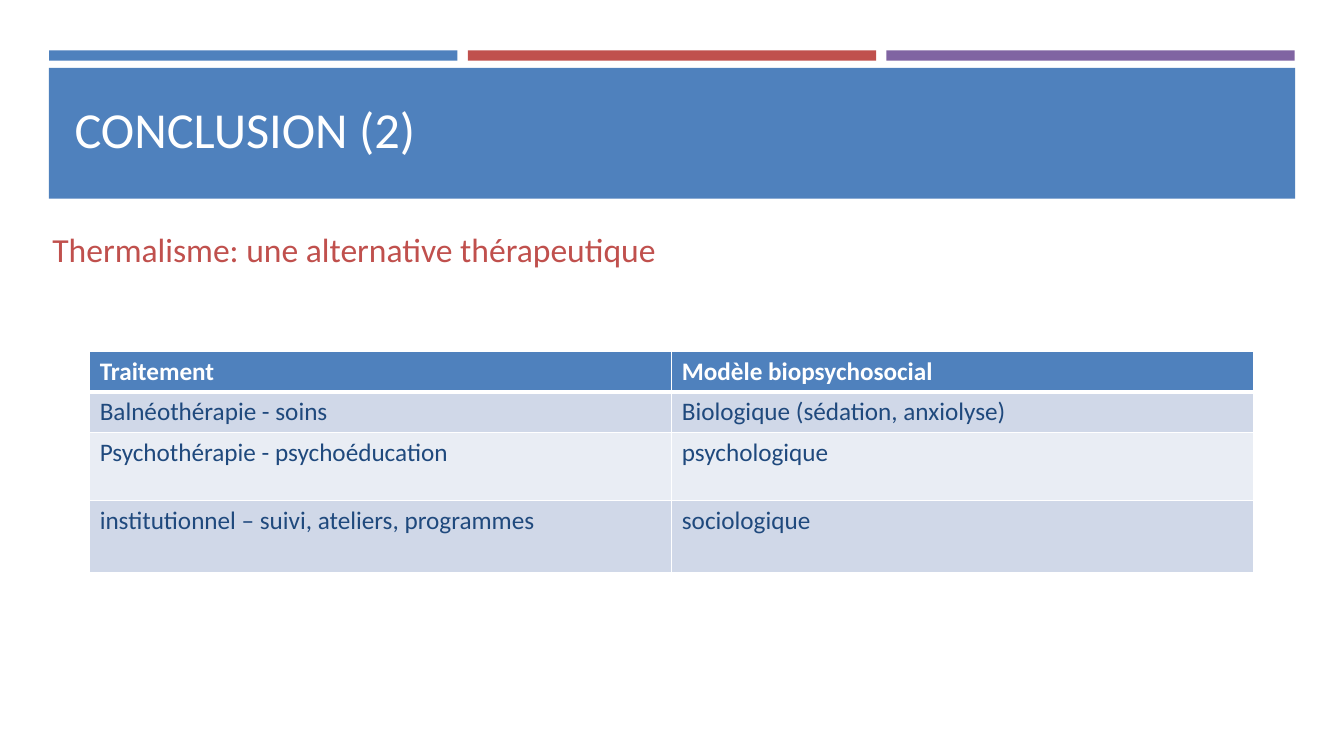
from lxml import etree
from pptx import Presentation
from pptx.dml.color import RGBColor
from pptx.enum.shapes import MSO_SHAPE
from pptx.enum.text import MSO_ANCHOR
from pptx.oxml.ns import qn
from pptx.util import Cm, Pt

RECTANGLE = MSO_SHAPE.RECTANGLE
TOP, BOTTOM = MSO_ANCHOR.TOP, MSO_ANCHOR.BOTTOM

WHITE, BLUE, RED, PURPLE = "FFFFFF", "4F81BD", "C0504D", "8064A2"
NAVY, BAND_DARK, BAND_LIGHT = "1F497D", "D0D8E8", "E9EDF4"


def color(value):
    return RGBColor.from_string(value)


class SlideBuilder:
    font_name = "Calibri"

    def __init__(self, slide):
        self.slide = slide

    def style(self, paragraph, size, text_color, bold=False):
        font = paragraph.font
        font.name, font.size, font.bold = self.font_name, Pt(size), bold
        font.color.rgb = color(text_color)

    def bar(self, left, top, width, height, fill):
        shape = self.slide.shapes.add_shape(
            RECTANGLE, Cm(left), Cm(top), Cm(width), Cm(height))
        shape.shadow.inherit = False
        shape.fill.solid()
        shape.fill.fore_color.rgb = color(fill)
        shape.line.fill.background()

    def text(self, left, top, width, height, text, size, text_color, anchor=TOP):
        box = self.slide.shapes.add_textbox(
            Cm(left), Cm(top), Cm(width), Cm(height))
        frame = box.text_frame
        frame.word_wrap = True
        frame.vertical_anchor = anchor
        frame.text = text
        self.style(frame.paragraphs[0], size, text_color)

    def borders(self, cell, widths):
        """Draw white borders; widths are points for left, right, top, bottom."""
        properties = cell._tc.get_or_add_tcPr()
        for index, (side, width) in enumerate(zip("LRTB", widths)):
            line = etree.Element(qn(f"a:ln{side}"), w=str(Pt(width)))
            fill = etree.SubElement(line, qn("a:solidFill"))
            etree.SubElement(fill, qn("a:srgbClr"), val=WHITE)
            properties.insert(index, line)

    def table(self, left, top, width, row_heights, rows, size):
        columns = len(rows[0])
        table = self.slide.shapes.add_table(
            len(rows), columns, Cm(left), Cm(top),
            Cm(width), Cm(sum(row_heights))).table
        for column in table.columns:
            column.width = Cm(width / columns)
        for row_index, (height, texts) in enumerate(zip(row_heights, rows)):
            table.rows[row_index].height = Cm(height)
            header = row_index == 0
            band = BAND_DARK if row_index % 2 else BAND_LIGHT
            for column_index, text in enumerate(texts):
                cell = table.cell(row_index, column_index)
                cell.text = text
                self.style(cell.text_frame.paragraphs[0], size,
                           WHITE if header else NAVY, bold=header)
                cell.fill.solid()
                cell.fill.fore_color.rgb = color(BLUE if header else band)
                self.borders(cell, (1, 1, 3 if row_index == 1 else 1,
                                    3 if header else 1))


def main():
    presentation = Presentation()
    presentation.slide_width, presentation.slide_height = Cm(33.87), Cm(19.05)
    builder = SlideBuilder(
        presentation.slides.add_slide(presentation.slide_layouts[6]))

    # Three accent bars above the title band
    for index, fill in enumerate((BLUE, RED, PURPLE)):
        builder.bar(1.24 + index * 10.55, 1.27, 10.29, 0.26, fill)

    # Title band
    builder.bar(1.23, 1.71, 31.41, 3.3, BLUE)
    builder.text(1.63, 1.3, 30.63, 2.82, "CONCLUSION (2)", 36, WHITE, BOTTOM)

    # Treatments and the model they belong to
    builder.table(2.26, 8.85, 29.34, (1.02, 1.02, 1.73, 1.8), (
        ("Traitement", "Modèle biopsychosocial"),
        ("Balnéothérapie - soins", "Biologique (sédation, anxiolyse)"),
        ("Psychothérapie - psychoéducation", "psychologique"),
        ("institutionnel – suivi, ateliers, programmes", "sociologique"),
    ), 18)

    # Subtitle
    builder.text(1.07, 5.64, 20.29, 1.27,
                 "Thermalisme: une alternative thérapeutique", 24, RED)

    presentation.save("out.pptx")


if __name__ == "__main__":
    main()
